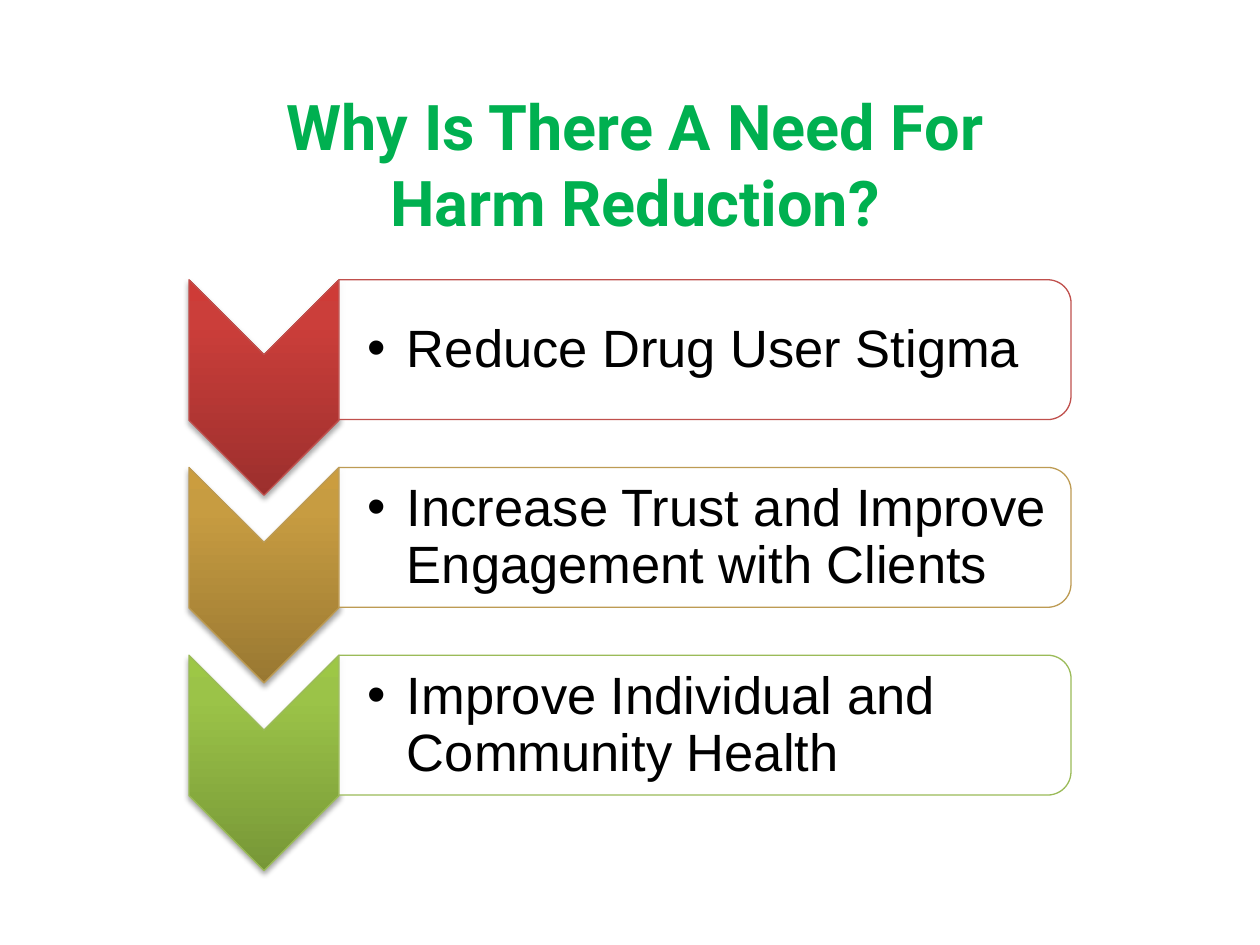
from dataclasses import dataclass

import pptx
import pptx.dml.color
import pptx.enum.shapes
import pptx.enum.text
import pptx.oxml
import pptx.oxml.ns
import pptx.util
from pptx.util import Inches

RGB = pptx.dml.color.RGBColor.from_string
KIND = pptx.enum.shapes.MSO_SHAPE
ALIGN = pptx.enum.text.PP_ALIGN
ANCHOR = pptx.enum.text.MSO_ANCHOR


@dataclass(frozen=True)
class Theme:
    title: str = "00B050"
    ink: str = "000000"
    card: str = "FFFFFF"
    head: str = "Roboto"
    body: str = "Arial"
    large: int = 36
    small: int = 30
    line: float = 0.75


@dataclass(frozen=True)
class Reason:
    text: str
    edge: str
    stops: tuple[str, str, str]


THEME = Theme()
REASONS = (
    Reason("Reduce Drug User Stigma", "C0504D", ("9C2F2D", "CB3E3A", "CE3B37")),
    Reason("Increase Trust and Improve Engagement with Clients", "BD9B53",
           ("997832", "C79C41", "CB9D3F")),
    Reason("Improve Individual and Community Health", "9BBB59",
           ("779737", "9BC348", "9DC746")),
)
TOP, STEP = 2.22, 1.49


def apply(item: object, values: dict) -> None:
    for name, value in values.items():
        setattr(item, name, value)


def parse_xml(tag: str, attrs: str = "", inner: str = ""):
    space = pptx.oxml.ns.nsdecls("a")
    return pptx.oxml.parse_xml(f"<a:{tag} {space} {attrs}>{inner}</a:{tag}>")


def style(font, name: str, size: int, color: str, bold: bool) -> None:
    apply(font, {"name": name, "size": pptx.util.Pt(size), "bold": bold})
    font.color.rgb = RGB(color)


def turned(shapes, kind, left: float, top: float, wide: float, high: float, edge: str):
    shape = shapes.add_shape(
        kind, Inches(left + (wide - high) / 2), Inches(top + (high - wide) / 2),
        Inches(high), Inches(wide))
    apply(shape, {"rotation": 90})
    apply(shape.shadow, {"inherit": False})
    apply(shape.line, {"width": pptx.util.Pt(THEME.line)})
    shape.line.color.rgb = RGB(edge)
    shape.fill.solid()
    shape.fill.fore_color.rgb = RGB(THEME.card)
    return shape


def draw_arrow(shapes, top: float, reason: Reason) -> None:
    shape = turned(shapes, KIND.CHEVRON, 1.5, top, 1.19, 1.71, reason.edge)
    props = shape.element.spPr
    stops = "".join(
        f'<a:gs pos="{place * 1000}"><a:srgbClr val="{color}"/></a:gs>'
        for place, color in zip((0, 80, 100), reason.stops))
    fill = parse_xml("gradFill", 'rotWithShape="0"',
                     f'<a:gsLst>{stops}</a:gsLst><a:lin ang="16200000" scaled="0"/>')
    props.replace(props.find(pptx.oxml.ns.qn("a:solidFill")), fill)
    props.find(pptx.oxml.ns.qn("a:effectLst")).append(parse_xml(
        "outerShdw",
        'blurRad="39370" dist="22860" dir="5400000" rotWithShape="0"',
        '<a:srgbClr val="000000"><a:alpha val="35000"/></a:srgbClr>'))


def draw_card(shapes, top: float, reason: Reason) -> None:
    shape = turned(shapes, KIND.ROUND_2_SAME_RECTANGLE, 2.69, top, 5.81, 1.11,
                   reason.edge)
    color = shape.element.spPr.find(
        f"{pptx.oxml.ns.qn('a:solidFill')}/{pptx.oxml.ns.qn('a:srgbClr')}")
    color.append(parse_xml("alpha", 'val="90000"'))


def draw_text(shapes, top: float, reason: Reason) -> None:
    box = shapes.add_textbox(Inches(2.69), Inches(top), Inches(5.75), Inches(1))
    frame = box.text_frame
    apply(frame, {
        "word_wrap": True, "vertical_anchor": ANCHOR.MIDDLE,
        "margin_left": Inches(0.23), "margin_right": Inches(0.02),
        "margin_top": Inches(0.02), "margin_bottom": Inches(0.02)})
    para = frame.paragraphs[0]
    apply(para, {"text": reason.text, "level": 1, "line_spacing": 0.9,
                 "alignment": ALIGN.LEFT})
    props = para._p.get_or_add_pPr()
    props.set("marL", str(Inches(0.31)))
    props.set("indent", str(-Inches(0.31)))
    props.append(parse_xml("buFont", 'typeface="Arial"'))
    props.append(parse_xml("buChar", 'char="•"'))
    style(para.runs[0].font, THEME.body, THEME.small, THEME.ink, False)


def draw_title(slide) -> None:
    title = slide.shapes.title
    apply(title, {"left": Inches(0.5), "top": Inches(0.67),
                  "width": Inches(9.08), "height": Inches(1.25)})
    apply(title.text_frame, {"text": "Why Is There A Need For\vHarm Reduction?",
                             "word_wrap": True, "vertical_anchor": ANCHOR.MIDDLE})
    para = title.text_frame.paragraphs[0]
    apply(para, {"alignment": ALIGN.CENTER})
    for run in para.runs:
        style(run.font, THEME.head, THEME.large, THEME.title, True)


def main() -> None:
    deck = pptx.Presentation()
    apply(deck, {"slide_width": Inches(10), "slide_height": Inches(7.5)})
    slide = deck.slides.add_slide(deck.slide_layouts[5])
    draw_title(slide)
    group = slide.shapes.add_group_shape()
    for index, reason in enumerate(REASONS):
        top = TOP + index * STEP
        draw_arrow(group.shapes, top, reason)
        draw_card(group.shapes, top, reason)
        draw_text(group.shapes, top + 0.06, reason)
    deck.save("out.pptx")


if __name__ == "__main__":
    main()
